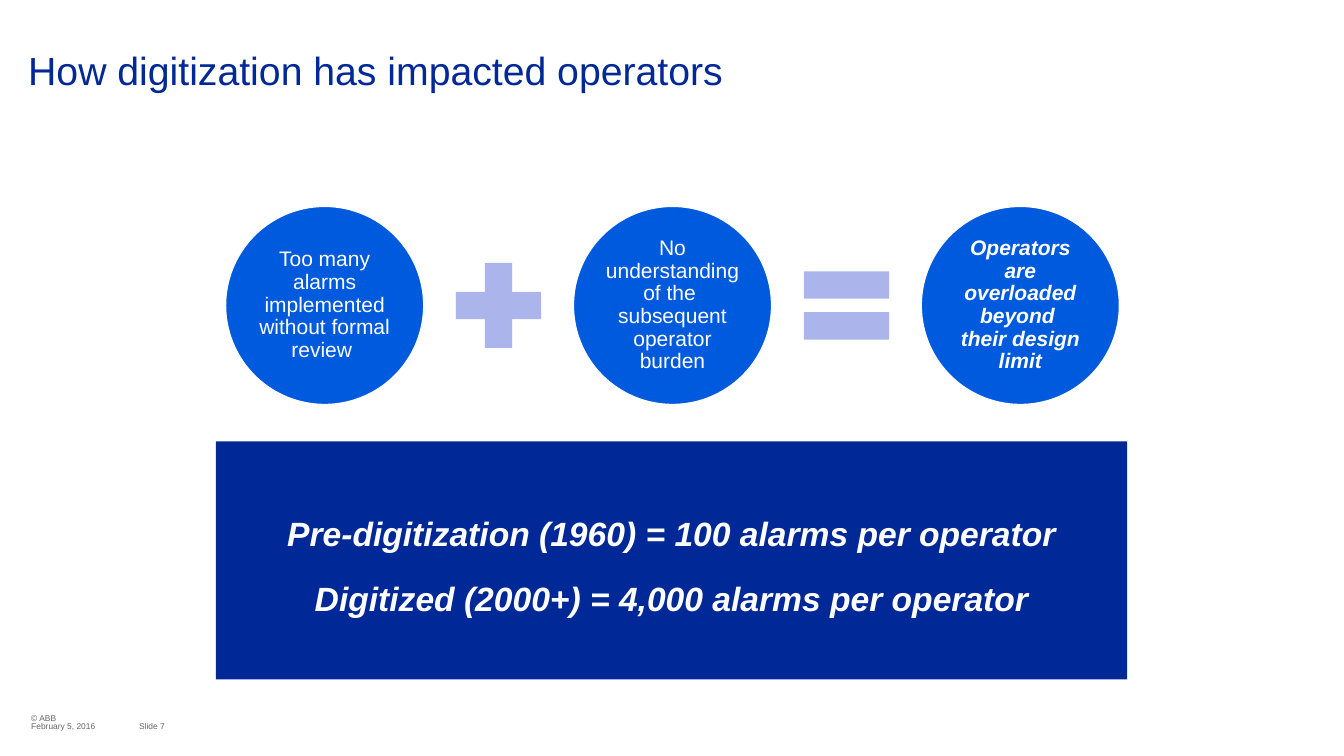
from copy import deepcopy

from pptx import Presentation
from pptx import util as u
from pptx.dml.color import RGBColor
from pptx.enum import shapes, text
from pptx.oxml.ns import qn

NAVY = RGBColor(0x00, 0x28, 0x97)
BLUE = RGBColor(0x00, 0x5A, 0xDE)
LILAC = RGBColor(0xAB, 0xB5, 0xEC)
GREY = RGBColor(0x66, 0x66, 0x66)
WHITE = RGBColor(0xFF, 0xFF, 0xFF)

TITLE = "How digitization has impacted operators"
CAUSES = [
    ("Too many alarms implemented without formal review ", False),
    ("No understanding of the \nsubsequent operator burden", False),
    ("Operators are overloaded beyond \ntheir design limit", True),
]
OPERATORS = [shapes.MSO_SHAPE.MATH_PLUS, shapes.MSO_SHAPE.MATH_EQUAL]
COMPARISON = [
    "Pre-digitization (1960) = 100 alarms per operator",
    "Digitized (2000+) = 4,000 alarms per operator",
]
FOOTER = [  # text, left, top, width
    ("© ABB", 0.31, 7.07, 1.62),
    ("Slide 7", 1.38, 7.15, 0.7),
    ("February 5, 2016", 0.31, 7.15, 1.05),
]

CIRCLE_LEFT, CIRCLE_TOP, CIRCLE_SIZE = 2.23, 2.04, 1.98
CIRCLE_STEP = 3.45
OPERATOR_SIZE = 1.15


def write(box, lines, size, color, strong=False, align=text.PP_ALIGN.LEFT,
          anchor=text.MSO_ANCHOR.MIDDLE, margins=(0, 0, 0, 0), spacing=1.0, gap=0):
    """Fill the box with one paragraph per line; strong is bold italic."""
    frame = box.text_frame
    frame.word_wrap = True
    frame.auto_size = text.MSO_AUTO_SIZE.NONE
    frame.vertical_anchor = anchor
    (frame.margin_left, frame.margin_top,
     frame.margin_right, frame.margin_bottom) = map(u.Inches, margins)
    for index, line in enumerate(lines):
        para = frame.add_paragraph() if index else frame.paragraphs[0]
        para.text = line.replace("\n", "\v")
        para.alignment = align
        para.line_spacing = spacing
        para.space_before = u.Pt(gap if index else 0)
        for span in para.runs:
            span.font.name = "Arial"
            span.font.size = u.Pt(size)
            span.font.color.rgb = color
            span.font.bold = span.font.italic = strong
        for line_break in para._p.findall(qn("a:br")):
            line_break.append(deepcopy(para.runs[0]._r.rPr))


def place(box, left, top, width, height):
    box.left, box.top = u.Inches(left), u.Inches(top)
    box.width, box.height = u.Inches(width), u.Inches(height)


def add_plain_shape(page, kind, left, top, size, color):
    """Add a square-framed shape with a solid fill, no line and no shadow."""
    shape = page.shapes.add_shape(kind, *map(u.Inches, (left, top, size, size)))
    shape.shadow.inherit = False
    shape.fill.solid()
    shape.fill.fore_color.rgb = color
    shape.line.fill.background()
    return shape


def remove_bullets(box):
    for para in box.text_frame.paragraphs:
        properties = para._p.get_or_add_pPr()
        properties.set("marL", "0")
        properties.set("indent", "0")
        properties.append(properties.makeelement(qn("a:buNone"), {}))


def main():
    deck = Presentation()
    deck.slide_width, deck.slide_height = u.Inches(13.33), u.Inches(7.5)
    page = deck.slides.add_slide(deck.slide_layouts[1])

    title, comparison = page.placeholders
    place(title, 0, 0, 13.33, 1.78)
    write(title, [TITLE], 28, NAVY, anchor=text.MSO_ANCHOR.TOP,
          margins=(0.28, 0.51, 0.28, 0), spacing=0.9)

    place(comparison, 2.14, 4.38, 9.04, 2.36)
    comparison.fill.solid()
    comparison.fill.fore_color.rgb = NAVY
    write(comparison, COMPARISON, 24, WHITE, strong=True,
          align=text.PP_ALIGN.CENTER, spacing=1.25, gap=11)
    remove_bullets(comparison)

    for index, (cause, strong) in enumerate(CAUSES):
        circle = add_plain_shape(page, shapes.MSO_SHAPE.OVAL,
                                 CIRCLE_LEFT + index * CIRCLE_STEP,
                                 CIRCLE_TOP, CIRCLE_SIZE, BLUE)
        circle.line.color.rgb = WHITE
        circle.line.width = u.Pt(2)
        write(circle, [cause], 15, WHITE, strong=strong,
              align=text.PP_ALIGN.CENTER, margins=(0.02,) * 4, spacing=0.9)

    # Each operator is centred in the gap between two circles.
    operator_left = CIRCLE_LEFT + (CIRCLE_SIZE + CIRCLE_STEP - OPERATOR_SIZE) / 2
    operator_top = CIRCLE_TOP + (CIRCLE_SIZE - OPERATOR_SIZE) / 2
    for index, kind in enumerate(OPERATORS):
        add_plain_shape(page, kind, operator_left + index * CIRCLE_STEP,
                        operator_top, OPERATOR_SIZE, LILAC)

    for label, left, top, width in FOOTER:
        box = page.shapes.add_textbox(*map(u.Inches, (left, top, width, 0.11)))
        write(box, [label], 6, GREY)

    deck.save("out.pptx")


if __name__ == "__main__":
    main()
